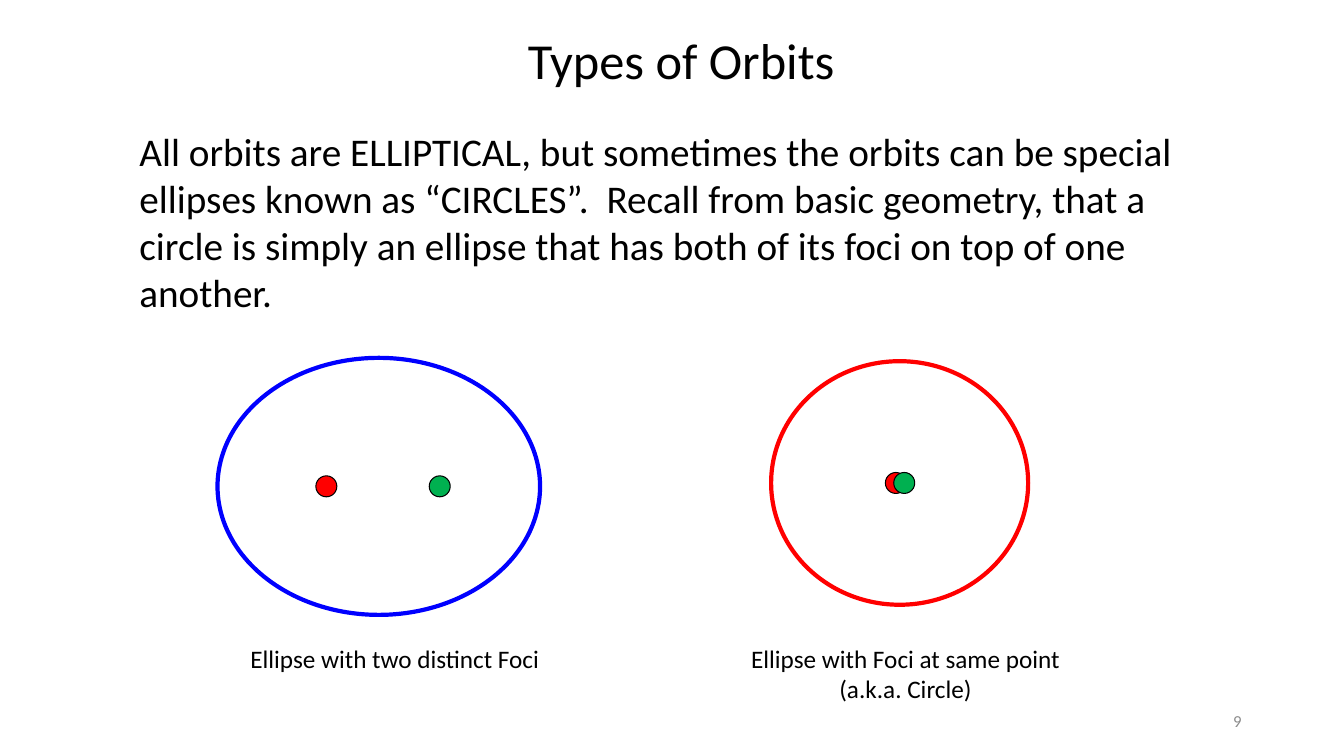
from dataclasses import dataclass
from typing import Optional

from lxml.etree import SubElement
from pptx import Presentation
from pptx.dml.color import RGBColor
from pptx.enum.shapes import MSO_SHAPE
from pptx.enum.text import MSO_ANCHOR, MSO_AUTO_SIZE, PP_ALIGN
from pptx.oxml.ns import qn
from pptx.util import Emu, Inches, Pt

COLORS = {
    "black": "000000",
    "white": "FFFFFF",
    "gray": "8C8C8C",
    "blue": "0000FF",
    "red": "FF0000",
    "green": "00B050",
}
FONT = "Calibri"

# Grid of 160 columns by 90 rows; cells are square
WIDTH, HEIGHT = Inches(40 / 3), Inches(7.5)
COLUMN, ROW = WIDTH / 160, HEIGHT / 90
FOCUS_SIZE = 2.5


@dataclass(frozen=True)
class Area:
    left: float
    top: float
    width: float
    height: float

    def lengths(self) -> tuple:
        return (Emu(round(self.left * COLUMN)), Emu(round(self.top * ROW)),
                Emu(round(self.width * COLUMN)), Emu(round(self.height * ROW)))


@dataclass(frozen=True)
class Label:
    text: str
    area: Area
    size: int
    color: str = "black"
    align: PP_ALIGN = PP_ALIGN.CENTER
    anchor: MSO_ANCHOR = MSO_ANCHOR.TOP


@dataclass(frozen=True)
class Orbit:
    area: Area
    line: str
    fill: Optional[str]
    foci: tuple  # column offsets of the red and green focus from the centre
    caption: Label


TITLE = Label("Types of Orbits", Area(34.3, 2.9, 93.6, 8.5), 36)
BODY = Label(
    "All orbits are ELLIPTICAL, but sometimes the orbits can be special "
    "ellipses known as “CIRCLES”.  Recall from basic geometry, that a circle "
    "is simply an ellipse that has both of its foci on top of one another.",
    Area(15.4, 14.5, 130.3, 23.9), 28, align=PP_ALIGN.LEFT)
PAGE_NUMBER = Label("9", Area(113, 83.4, 36, 4.8), 12, "gray",
                    PP_ALIGN.RIGHT, MSO_ANCHOR.MIDDLE)
ORBITS = (
    Orbit(Area(25.9, 42.6, 38.4, 30.6), "blue", None, (-6.25, 7.25),
          Label("Ellipse with two distinct Foci",
                Area(23.4, 76, 47.2, 4.8), 18)),
    Orbit(Area(91.8, 43, 30.6, 29), "red", "white", (-0.45, 0.55),
          Label("Ellipse with Foci at same point (a.k.a. Circle)",
                Area(84.2, 76, 47.2, 8.5), 18)),
)


def color(name: str) -> RGBColor:
    return RGBColor.from_string(COLORS[name])


def write_label(box, label: Label) -> None:
    box.left, box.top, box.width, box.height = label.area.lengths()
    frame = box.text_frame
    frame.word_wrap = True
    frame.auto_size = MSO_AUTO_SIZE.NONE
    frame.vertical_anchor = label.anchor
    para = frame.paragraphs[0]
    para.alignment = label.align
    para.space_before = Pt(0)
    span = para.add_run()
    span.text = label.text
    span.font.name = FONT
    span.font.size = Pt(label.size)
    span.font.color.rgb = color(label.color)


def add_label(page, label: Label) -> None:
    write_label(page.shapes.add_textbox(*label.area.lengths()), label)


def add_ellipse(group, area: Area, fill: Optional[str], line: str,
                weight: float) -> None:
    ellipse = group.shapes.add_shape(MSO_SHAPE.OVAL, *area.lengths())
    ellipse.shadow.inherit = False
    if fill is None:
        ellipse.fill.background()
    else:
        ellipse.fill.solid()
        ellipse.fill.fore_color.rgb = color(fill)
    ellipse.line.color.rgb = color(line)
    ellipse.line.width = Pt(weight)


def add_orbit(page, orbit: Orbit) -> None:
    group = page.shapes.add_group_shape()
    area = orbit.area
    add_ellipse(group, area, orbit.fill, orbit.line, 3)
    left = area.left + (area.width - FOCUS_SIZE) / 2
    top = area.top + (area.height - FOCUS_SIZE) / 2
    for offset, fill in zip(orbit.foci, ("red", "green")):
        focus = Area(left + offset, top, FOCUS_SIZE, FOCUS_SIZE)
        add_ellipse(group, focus, fill, "black", 0.75)


def main() -> None:
    deck = Presentation()
    deck.slide_width, deck.slide_height = WIDTH, HEIGHT
    page = deck.slides.add_slide(deck.slide_layouts[1])

    # Title and explanation
    write_label(page.shapes.title, TITLE)
    body = page.placeholders[1]
    write_label(body, BODY)
    properties = body.text_frame.paragraphs[0]._p.get_or_add_pPr()
    properties.set("marL", "0")
    properties.set("indent", "0")
    SubElement(properties, qn("a:buNone"))

    # Orbits, then their captions
    for orbit in ORBITS:
        add_orbit(page, orbit)
    for orbit in ORBITS:
        add_label(page, orbit.caption)

    # Page number
    add_label(page, PAGE_NUMBER)

    deck.save("out.pptx")


if __name__ == "__main__":
    main()
